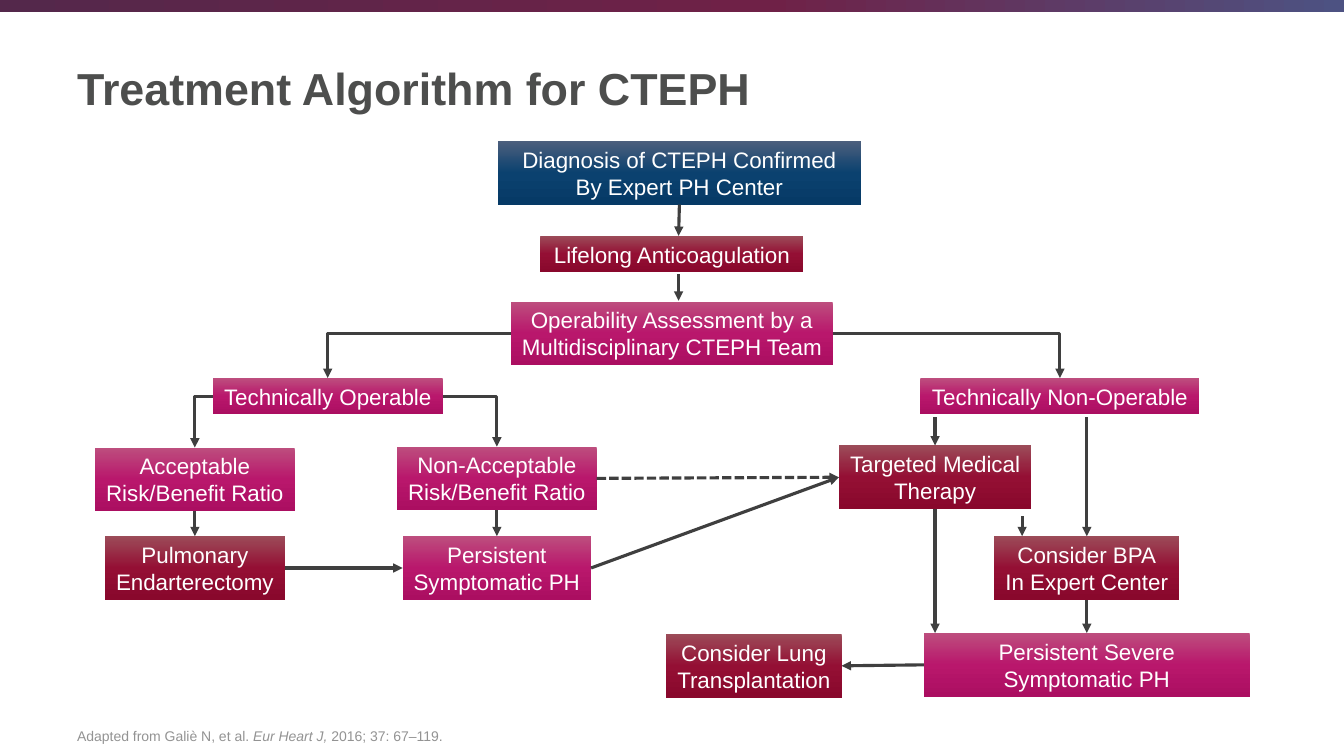
import copy

import pptx
import pptx.dml.color
import pptx.enum.dml
import pptx.enum.shapes
import pptx.enum.text
import pptx.oxml.ns
import pptx.oxml.xmlchemy
import pptx.util

Pt = pptx.util.Pt
qn = pptx.oxml.ns.qn
OxmlElement = pptx.oxml.xmlchemy.OxmlElement
SHAPE = pptx.enum.shapes.MSO_SHAPE
CONNECTOR = pptx.enum.shapes.MSO_CONNECTOR
ALIGN = pptx.enum.text.PP_ALIGN
ANCHOR = pptx.enum.text.MSO_ANCHOR

BANNER = [(0, "54284B"), (0.57, "6F2147"), (1, "4D5282")]
BLUE = [(0, "4C5F7D"), (0.5, "0B416F"), (1, "063A66")]
RED = [(0, "9C4C59"), (0.5, "940F34"), (1, "89082C")]
PINK = [(0, "BD4E7E"), (0.5, "B9176C"), (1, "AB0E61")]

TOP, LEFT, BOTTOM, RIGHT = range(4)
ONE_ROW, TWO_ROWS = 26, 45.4

# name: (centre x, top, width, height, colours, paragraphs), relative to the chart
STEPS = {
    "diagnosis": (417.6, 0, 259.2, TWO_ROWS, BLUE,
                  ["Diagnosis of CTEPH Confirmed By Expert PH Center"]),
    "anticoagulation": (412.2, 67.7, 187.9, ONE_ROW, RED, ["Lifelong Anticoagulation"]),
    "assessment": (412.2, 114.6, 229.8, TWO_ROWS, PINK,
                   ["Operability Assessment by a", "Multidisciplinary CTEPH Team"]),
    "non-operable": (689.4, 169.2, 199.4, ONE_ROW, PINK, ["Technically Non-Operable"]),
    "operable": (166.4, 169.2, 164.2, ONE_ROW, PINK, ["Technically Operable"]),
    "non-acceptable": (287.2, 218.2, 142.6, TWO_ROWS, PINK,
                       ["Non-Acceptable", "Risk/Benefit Ratio"]),
    "persistent": (287.2, 282.2, 134.6, TWO_ROWS, PINK, ["Persistent", "Symptomatic PH"]),
    "surgery": (71.5, 282.2, 128.9, TWO_ROWS, RED, ["Pulmonary", "Endarterectomy"]),
    "acceptable": (71.5, 218.9, 142.6, TWO_ROWS, PINK, ["Acceptable", "Risk/Benefit Ratio"]),
    "medical": (600.2, 217.4, 137.5, TWO_ROWS, RED, ["Targeted Medical", "Therapy"]),
    "bpa": (708.6, 282.2, 132.5, TWO_ROWS, RED, ["Consider BPA", "In Expert Center"]),
    "severe": (708.6, 351.4, 232.6, TWO_ROWS, PINK, ["Persistent Severe", "Symptomatic PH"]),
    "transplant": (470.8, 352.1, 125.3, TWO_ROWS, RED, ["Consider Lung", "Transplantation"]),
}

# Each end is (step, side) or a point (x, y) in the chart
STRAIGHT_ARROWS = [
    (("diagnosis", BOTTOM), (417, 67.7)),
    ((417, 95), (417, 114)),
    (("acceptable", BOTTOM), ("surgery", TOP)),
    (("non-acceptable", BOTTOM), ("persistent", TOP)),
    (("surgery", RIGHT), ("persistent", LEFT)),
    (("persistent", RIGHT), ("medical", LEFT)),
    ((600.2, 197.3), ("medical", TOP)),
    ((708.6, 197.3), ("bpa", TOP)),
    (("bpa", BOTTOM), ("severe", TOP)),
    ((662.4, 267.8), (662.4, 282.2)),
    (("medical", BOTTOM), (600.2, 351.4)),
    (("severe", LEFT), ("transplant", RIGHT)),
]
DASHED_ARROWS = [(("non-acceptable", RIGHT), ("medical", LEFT))]
BENT_ARROWS = [
    (("assessment", LEFT), ("operable", TOP)),
    (("assessment", RIGHT), ("non-operable", TOP)),
    (("operable", LEFT), ("acceptable", TOP)),
    (("operable", RIGHT), ("non-acceptable", TOP)),
]


def rgb(color):
    return pptx.dml.color.RGBColor.from_string(color)


def write(tf, paragraphs, size, color, bold=False, align=ALIGN.LEFT,
          anchor=ANCHOR.MIDDLE, wrap=True):
    """Fill a text frame; a paragraph is a string or a list of (text, italic)."""
    tf.word_wrap = wrap
    tf.vertical_anchor = anchor
    for i, runs in enumerate(paragraphs):
        p = tf.add_paragraph() if i else tf.paragraphs[0]
        p.alignment = align
        for text, italic in [(runs, False)] if isinstance(runs, str) else runs:
            r = p.add_run()
            r.text = text
            r.font.name = "Arial"
            r.font.size = Pt(size)
            r.font.bold = bold
            r.font.italic = italic
            r.font.color.rgb = rgb(color)


def add_text(slide, box, paragraphs, **style):
    tb = slide.shapes.add_textbox(*map(Pt, box))
    write(tb.text_frame, paragraphs, **style)


def add_gradient_box(slide, box, colors, angle):
    s = slide.shapes.add_shape(SHAPE.RECTANGLE, *map(Pt, box))
    s.shadow.inherit = False
    s.line.fill.background()
    s.fill.gradient()
    s.fill.gradient_angle = angle
    stops = s._element.spPr.find(".//" + qn("a:gsLst"))
    stops.append(copy.deepcopy(stops[0]))
    for stop, (position, color) in zip(s.fill.gradient_stops, colors):
        stop.position = position
        stop.color.rgb = rgb(color)
    return s


def add_arrow(slide, origin, steps, start, end, bent=False, dashed=False):
    c = slide.shapes.add_connector(CONNECTOR.ELBOW if bent else CONNECTOR.STRAIGHT, 0, 0, 0, 0)
    x, y = origin
    if start[0] in steps:
        c.begin_connect(steps[start[0]], start[1])
    else:
        c.begin_x, c.begin_y = Pt(x + start[0]), Pt(y + start[1])
    if end[0] in steps:
        c.end_connect(steps[end[0]], end[1])
    else:
        c.end_x, c.end_y = Pt(x + end[0]), Pt(y + end[1])
    c.line.color.rgb = rgb("3F3F3F")
    c.line.width = Pt(2.25)
    if dashed:
        c.line.dash_style = pptx.enum.dml.MSO_LINE.SQUARE_DOT
    spPr = c._element.spPr
    if bent:
        spPr.find(qn("a:prstGeom")).set("prst", "bentConnector2")
    head = OxmlElement("a:tailEnd")
    head.set("type", "triangle")
    spPr.find(qn("a:ln")).append(head)
    spPr.append(OxmlElement("a:effectLst"))


def add_flowchart(slide, origin):
    x, y = origin
    steps = {}
    for name, (center, top, width, height, colors, paragraphs) in STEPS.items():
        box = (x + center - width / 2, y + top, width, height)
        s = steps[name] = add_gradient_box(slide, box, colors, 270)
        write(s.text_frame, paragraphs, size=16, color="FFFFFF", align=ALIGN.CENTER,
              wrap=name == "diagnosis")
    for start, end in STRAIGHT_ARROWS:
        add_arrow(slide, origin, steps, start, end)
    for start, end in DASHED_ARROWS:
        add_arrow(slide, origin, steps, start, end, dashed=True)
    for start, end in BENT_ARROWS:
        add_arrow(slide, origin, steps, start, end, bent=True)


def add_frame(slide, box):
    """Place the top banner, the title and the citation."""
    x, y, width, height = box
    add_gradient_box(slide, (x, y, width, 8.6), BANNER, 0)
    add_text(slide, (x + 48, y + 16, 846, 93.6), ["Treatment Algorithm for CTEPH"],
             size=32, color="4D4E4D", bold=True)
    citation = [("Adapted from Galiè N, et al. ", False), ("Eur Heart J, ", True),
                ("2016; 37: 67–119.", False)]
    add_text(slide, (x + 48, y + height - 39.6, 846, 34.6), [citation],
             size=10, color="939393", anchor=ANCHOR.BOTTOM)


def main():
    prs = pptx.Presentation()
    prs.slide_width, prs.slide_height = Pt(960), Pt(540)
    slide = prs.slides.add_slide(prs.slide_layouts[6])
    add_frame(slide, (0, 0, 960, 540))
    add_flowchart(slide, (67.7, 100.8))
    prs.save("out.pptx")


if __name__ == "__main__":
    main()
